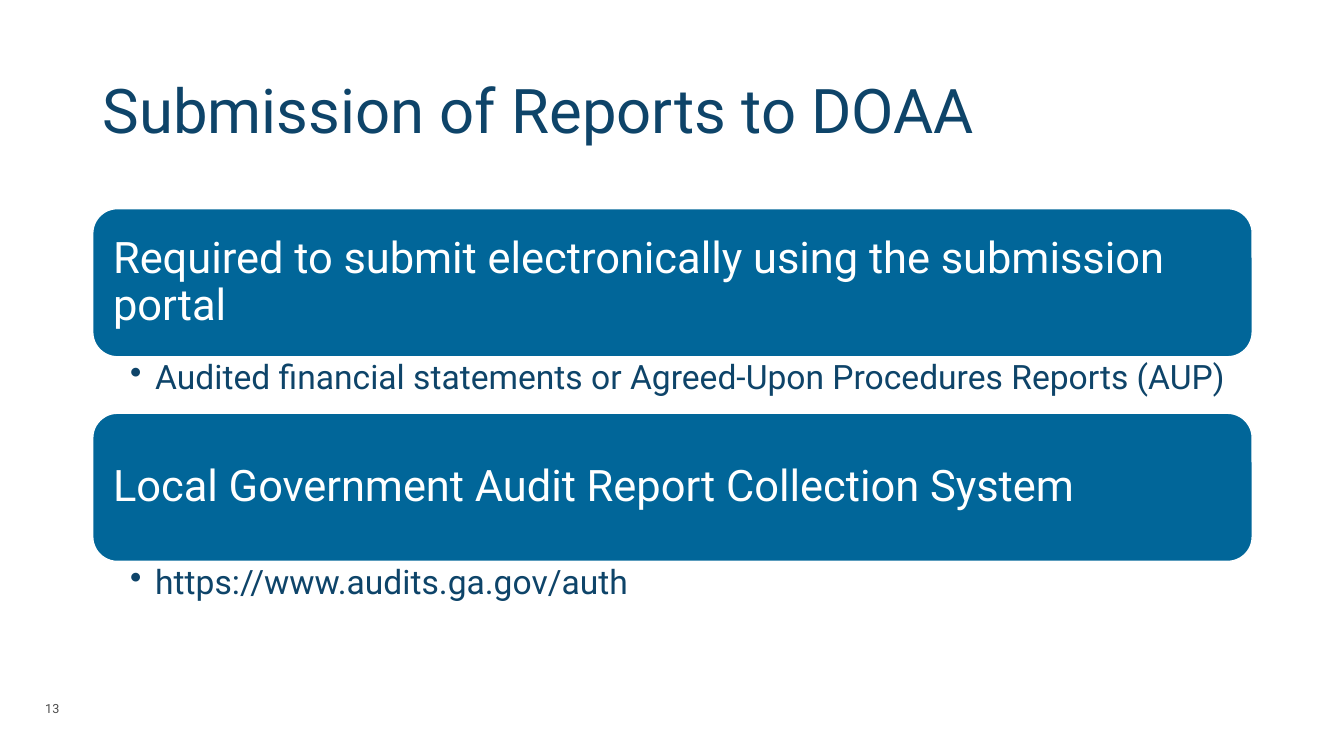
from lxml.etree import SubElement
from pptx import Presentation
from pptx.dml.color import RGBColor
from pptx.enum.shapes import MSO_SHAPE
from pptx.enum.text import MSO_ANCHOR, PP_ALIGN
from pptx.oxml.ns import qn
from pptx.util import Inches, Pt

TITLE = "Submission of Reports to DOAA"
SECTIONS = [
    ("Required to submit electronically using the submission portal",
     "Audited financial statements or Agreed-Upon Procedures Reports (AUP)"),
    ("Local Government Audit Report Collection System",
     "https://www.audits.ga.gov/auth"),
]
SLIDE_NUMBER = "13"

NAVY, BLUE, GRAY, WHITE = "0E4469", "016699", "4B4B4B", "FFFFFF"
LEFT, WIDTH = 0.92, 11.5
SECTIONS_TOP, BANNER_HEIGHT, DETAIL_HEIGHT = 2.07, 1.47, 0.56


def rgb(color):
    return RGBColor.from_string(color)


def place(shape, left, top, width, height):
    shape.left, shape.top = Inches(left), Inches(top)
    shape.width, shape.height = Inches(width), Inches(height)


def write(shape, text, size, color, anchor=MSO_ANCHOR.MIDDLE,
          insets=(0.1, 0.05, 0.1, 0.05), spacing=0.9, bullet=False):
    """Fill a shape with one left-aligned paragraph; insets are left, top, right, bottom."""
    frame = shape.text_frame
    frame.word_wrap = True
    frame.vertical_anchor = anchor
    (frame.margin_left, frame.margin_top,
     frame.margin_right, frame.margin_bottom) = map(Inches, insets)
    paragraph = frame.paragraphs[0]
    paragraph.text = text
    paragraph.alignment = PP_ALIGN.LEFT
    paragraph.line_spacing = spacing
    if bullet:
        properties = paragraph._p.get_or_add_pPr()
        properties.set("marL", str(Inches(0.25)))
        properties.set("indent", str(Inches(-0.25)))
        SubElement(properties, qn("a:buChar")).set("char", "•")
    font = paragraph.font
    font.name, font.size = "Roboto", Pt(size)
    font.color.rgb = rgb(color)


def add_banner(slide, text, top):
    banner = slide.shapes.add_shape(
        MSO_SHAPE.ROUNDED_RECTANGLE, Inches(LEFT), Inches(top),
        Inches(WIDTH), Inches(BANNER_HEIGHT))
    banner.shadow.inherit = False
    banner.fill.solid()
    banner.fill.fore_color.rgb = rgb(BLUE)
    banner.line.color.rgb = rgb(WHITE)
    banner.line.width = Pt(1)
    write(banner, text, 31, WHITE, insets=(0.13,) * 4)


def add_detail(slide, text, top):
    detail = slide.shapes.add_textbox(
        Inches(LEFT), Inches(top), Inches(WIDTH), Inches(DETAIL_HEIGHT))
    write(detail, text, 24, NAVY, MSO_ANCHOR.TOP,
          insets=(0.37, 0.04, 0.24, 0.04), bullet=True)


def main():
    presentation = Presentation()
    presentation.slide_width = Inches(13.33)
    presentation.slide_height = Inches(7.5)
    slide = presentation.slides.add_slide(presentation.slide_layouts[5])

    title = slide.shapes.title
    place(title, LEFT, 0.4, WIDTH, 1.45)
    write(title, TITLE, 44, NAVY)

    for index, (heading, detail) in enumerate(SECTIONS):
        top = SECTIONS_TOP + index * (BANNER_HEIGHT + DETAIL_HEIGHT)
        add_banner(slide, heading, top)
        add_detail(slide, detail, top + BANNER_HEIGHT)

    number = slide.shapes.add_textbox(
        Inches(0.35), Inches(6.83), Inches(5.18), Inches(0.4))
    write(number, SLIDE_NUMBER, 9, GRAY, spacing=1.0)

    presentation.save("out.pptx")


if __name__ == "__main__":
    main()
